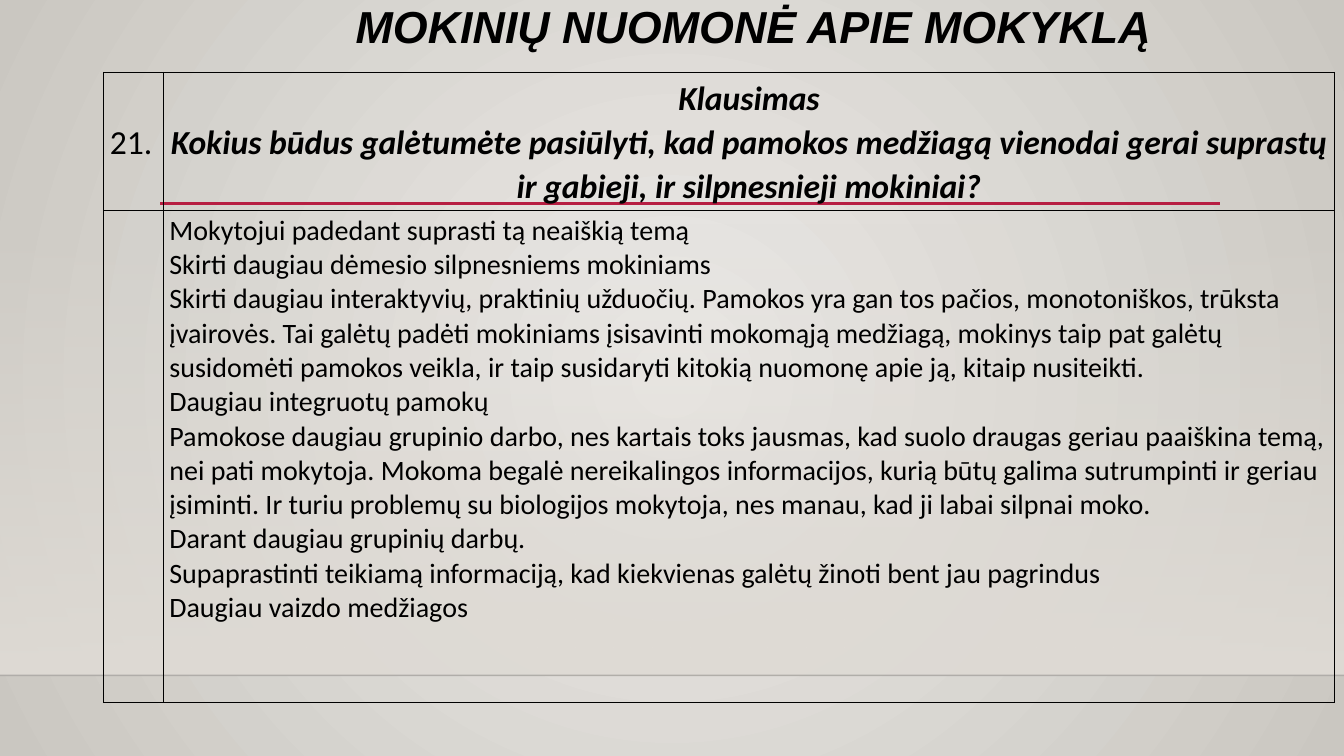
from lxml.etree import SubElement
from pptx import Presentation
from pptx.dml.color import RGBColor
from pptx.enum.shapes import MSO_CONNECTOR, MSO_SHAPE
from pptx.enum.text import MSO_ANCHOR, PP_ALIGN
from pptx.oxml.ns import qn
from pptx.util import Inches, Pt

TITLE = "MOKINIŲ NUOMONĖ APIE MOKYKLĄ"
NUMBER = ["21."]
QUESTION = [
    "Klausimas",
    "Kokius būdus galėtumėte pasiūlyti, kad pamokos medžiagą vienodai gerai suprastų "
    "ir gabieji, ir silpnesnieji mokiniai?",
]
ANSWERS = [
    "Mokytojui padedant suprasti tą neaiškią temą",
    "Skirti daugiau dėmesio silpnesniems mokiniams",
    "Skirti daugiau interaktyvių, praktinių užduočių. Pamokos yra gan tos pačios, "
    "monotoniškos, trūksta įvairovės. Tai galėtų padėti mokiniams įsisavinti mokomąją "
    "medžiagą, mokinys taip pat galėtų susidomėti pamokos veikla, ir taip susidaryti "
    "kitokią nuomonę apie ją, kitaip nusiteikti.",
    "Daugiau integruotų pamokų",
    "Pamokose daugiau grupinio darbo, nes kartais toks jausmas, kad suolo draugas geriau "
    "paaiškina temą, nei pati mokytoja. Mokoma begalė nereikalingos informacijos, kurią "
    "būtų galima sutrumpinti ir geriau įsiminti. Ir turiu problemų su biologijos mokytoja, "
    "nes manau, kad ji labai silpnai moko.",
    "Darant daugiau grupinių darbų.",
    "Supaprastinti teikiamą informaciją, kad kiekvienas galėtų žinoti bent jau pagrindus",
    "Daugiau vaizdo medžiagos",
]
COLUMN_WIDTHS = [0.59, 11.62]
ROW_HEIGHTS = [1.37, 4.88]

BLACK = RGBColor(0x00, 0x00, 0x00)
FLOOR_LINE = RGBColor(0x00, 0x00, 0x01)
CRIMSON = RGBColor(0xB7, 0x1E, 0x42)
LIGHT = RGBColor(0xEC, 0xEA, 0xE7)
DARK = RGBColor(0xCA, 0xC7, 0xC1)
WALL = RGBColor(0xDF, 0xDB, 0xD5)


def set_gradient(fill, start, end):
    fill.gradient()
    for stop, color in zip(fill.gradient_stops, (start, end)):
        stop.color.rgb = color


def set_alpha(color_element, percent):
    SubElement(color_element, qn("a:alpha")).set("val", str(percent * 1000))


def paint_background(slide):
    set_gradient(slide.background.fill, LIGHT, DARK)
    gradient = next(slide.element.iter(qn("a:gradFill")))
    gradient.remove(gradient.find(qn("a:lin")))
    radial = SubElement(gradient, qn("a:path"))
    radial.set("path", "circle")
    center = SubElement(radial, qn("a:fillToRect"))
    for side in "ltrb":
        center.set(side, "50000")


def add_wall(slide):
    """Add the band that fades in from transparent down to the floor line."""
    wall = slide.shapes.add_shape(
        MSO_SHAPE.RECTANGLE, 0, Inches(2.21), Inches(13.33), Inches(4.49))
    wall.shadow.inherit = False
    wall.line.fill.background()
    set_gradient(wall.fill, WALL, WALL)
    gradient = next(wall.element.iter(qn("a:gradFill")))
    set_alpha(next(gradient.iter(qn("a:srgbClr"))), 0)
    gradient.find(qn("a:lin")).set("ang", "5400000")


def add_rule(slide, left, right, top, color, width):
    rule = slide.shapes.add_connector(
        MSO_CONNECTOR.STRAIGHT, Inches(left), Inches(top), Inches(right), Inches(top))
    rule.line.color.rgb = color
    rule.line.width = Pt(width)
    SubElement(rule.element.spPr, qn("a:effectLst"))
    return rule


def write(text_frame, lines, size, name="Calibri", emphasis=False,
          alignment=PP_ALIGN.LEFT, spacing=1.0):
    text_frame.text = "\n".join(lines)
    for paragraph in text_frame.paragraphs:
        paragraph.alignment = alignment
        paragraph.line_spacing = spacing
        for run in paragraph.runs:
            run.font.size = Pt(size)
            run.font.name = name
            run.font.bold = run.font.italic = emphasis
            run.font.color.rgb = BLACK


def format_cell(cell):
    cell.margin_left = cell.margin_right = Inches(0.06)
    cell.margin_top = cell.margin_bottom = Inches(0.03)
    properties = cell._tc.get_or_add_tcPr()
    for side in ("lnL", "lnR", "lnT", "lnB"):
        border = SubElement(properties, qn(f"a:{side}"))
        border.set("w", str(Pt(1)))
        solid = SubElement(border, qn("a:solidFill"))
        SubElement(solid, qn("a:srgbClr")).set("val", str(BLACK))
    cell.fill.background()


def add_title(slide):
    title = slide.shapes.add_textbox(Inches(1.66), Inches(0), Inches(11.63), Inches(0.7))
    title.text_frame.word_wrap = True
    write(title.text_frame, [TITLE], 32, "Arial", True, PP_ALIGN.CENTER, 0.9)


def add_answer_table(slide):
    table = slide.shapes.add_table(
        len(ROW_HEIGHTS), len(COLUMN_WIDTHS), Inches(1.03), Inches(0.72),
        Inches(sum(COLUMN_WIDTHS)), Inches(sum(ROW_HEIGHTS))).table
    table.first_row = table.horz_banding = False
    for column, width in zip(table.columns, COLUMN_WIDTHS):
        column.width = Inches(width)
    for row, height in zip(table.rows, ROW_HEIGHTS):
        row.height = Inches(height)
    for cell in table.iter_cells():
        format_cell(cell)
    number = table.cell(0, 0)
    number.vertical_anchor = MSO_ANCHOR.MIDDLE
    write(number.text_frame, NUMBER, 24, spacing=1.07)
    write(table.cell(0, 1).text_frame, QUESTION, 24, emphasis=True,
          alignment=PP_ALIGN.CENTER, spacing=1.07)
    write(table.cell(1, 1).text_frame, ANSWERS, 20)


def main():
    presentation = Presentation()
    presentation.slide_width = Inches(13.33)
    presentation.slide_height = Inches(7.5)
    slide = presentation.slides.add_slide(presentation.slide_layouts[6])
    paint_background(slide)
    add_wall(slide)
    floor = add_rule(slide, 0, 13.33, 6.7, FLOOR_LINE, 1)
    set_alpha(next(floor.element.spPr.iter(qn("a:srgbClr"))), 20)
    add_rule(slide, 1.59, 12.1, 2.02, CRIMSON, 2.5)
    add_title(slide)
    add_answer_table(slide)
    presentation.save("out.pptx")


if __name__ == "__main__":
    main()
